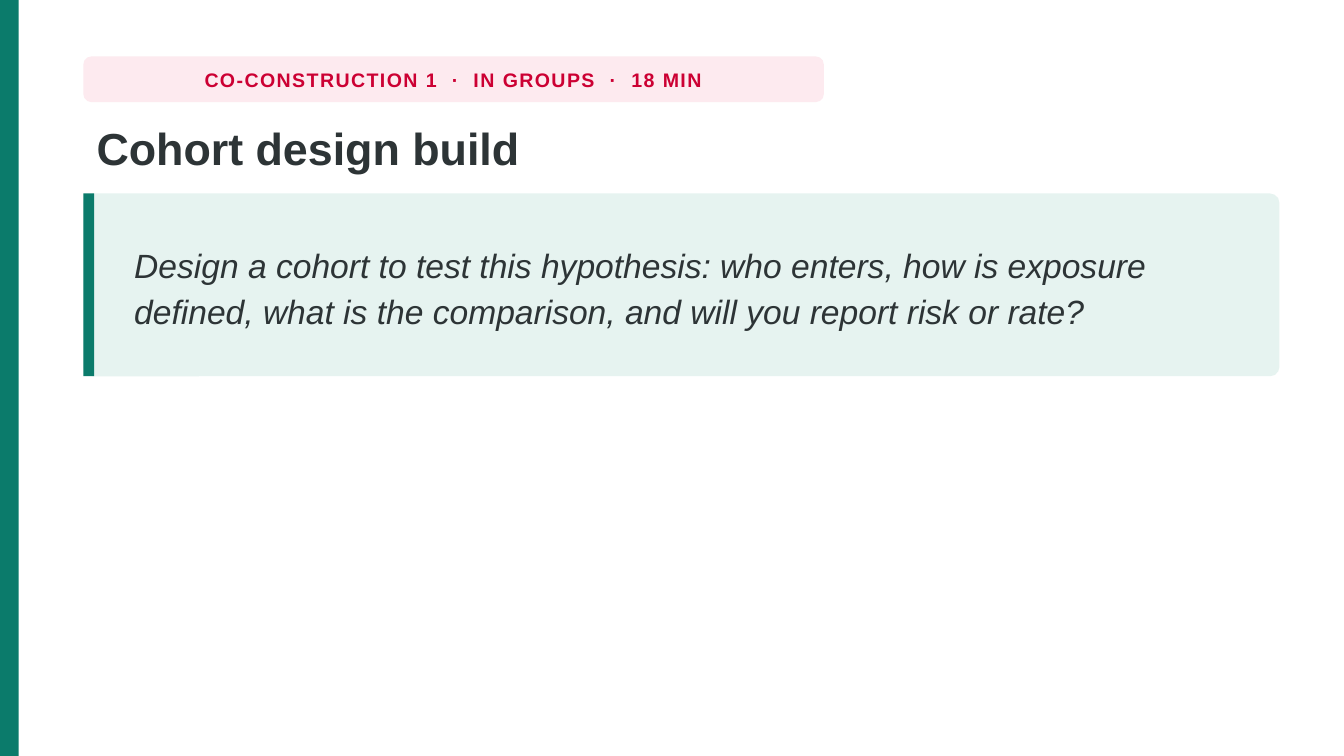
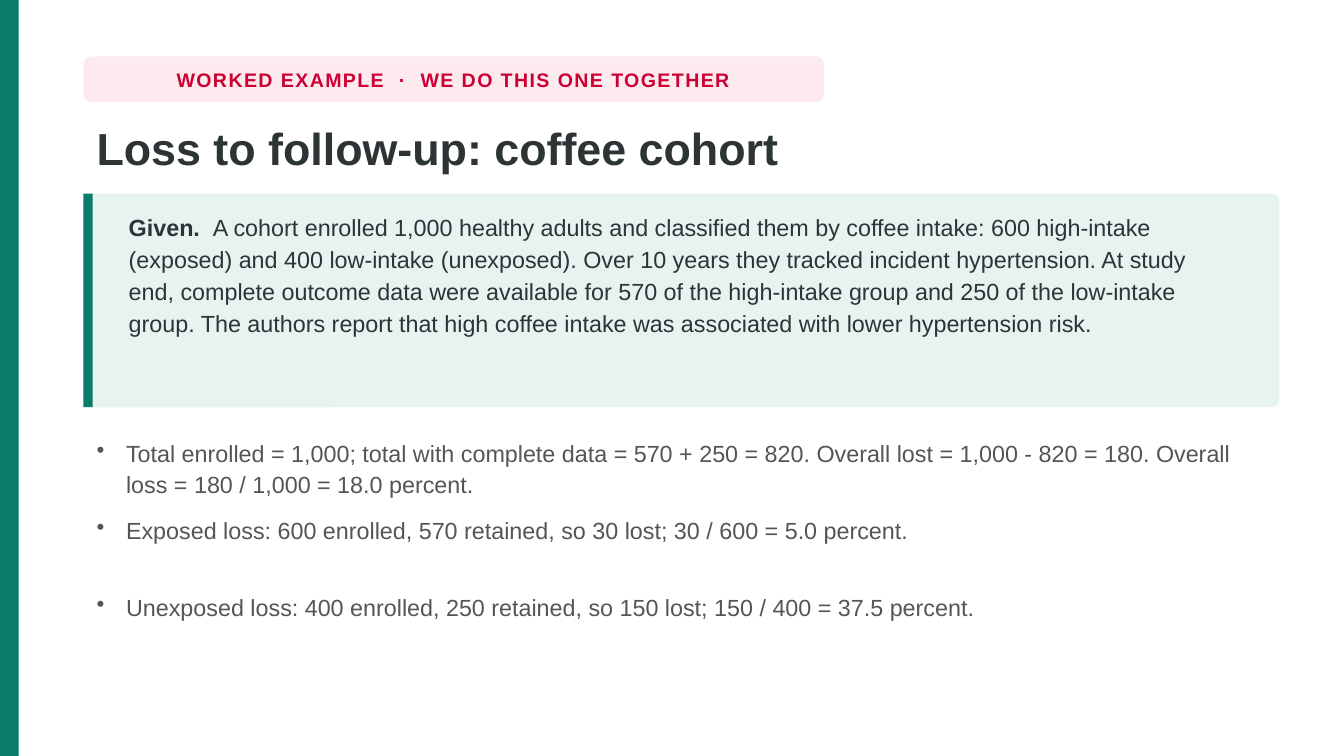
from pptx import Presentation
from pptx.dml.color import RGBColor
from pptx.enum.shapes import MSO_SHAPE as SHAPE
from pptx.enum.text import MSO_ANCHOR as ANCHOR, PP_ALIGN as ALIGN
from pptx.oxml.ns import qn
from pptx.util import Pt
from lxml import etree

GREEN = RGBColor(0x0B, 0x7B, 0x6B)
MINT = RGBColor(0xE6, 0xF3, 0xF0)
PINK = RGBColor(0xFD, 0xEA, 0xEF)
RED = RGBColor(0xCC, 0x00, 0x33)
INK = RGBColor(0x2D, 0x34, 0x36)
GREY = RGBColor(0x55, 0x55, 0x55)

FONT = "Arial"
WIDTH, HEIGHT = 720, 405
LEFT, CONTENT_W = 44.64, 640.8
CARD_TOP = 103.68
BULLET_INDENT, BULLET_H, BULLET_STEP = 15.84, 35.28, 41.4


class Deck:
    """Holds the shared style and the slide being built."""

    def __init__(self):
        self.prs = Presentation()
        self.prs.slide_width, self.prs.slide_height = Pt(WIDTH), Pt(HEIGHT)
        self.slide = None

    def add_slide(self, tag, title):
        """Start a slide with its side band, tag pill and title."""
        self.slide = self.prs.slides.add_slide(self.prs.slide_layouts[6])
        self.box(0, 0, 10.08, HEIGHT, GREEN)
        pill = (LEFT, 30.24, 396.72, 24.48)
        self.box(*pill, PINK, radius=4.32)
        p = self.text(*pill, [tag], 10.5, RED, anchor=ANCHOR.MIDDLE, wrap=False)
        p.alignment = ALIGN.CENTER
        p.runs[0].font.bold = True
        p.runs[0].font._element.set("spc", "80")
        p = self.text(LEFT, 60.48, CONTENT_W, 40.32, [title], 24, INK, spacing=1.02)
        p.runs[0].font.bold = True

    def box(self, x, y, w, h, color, radius=0):
        kind = SHAPE.ROUNDED_RECTANGLE if radius else SHAPE.RECTANGLE
        sp = self.slide.shapes.add_shape(kind, Pt(x), Pt(y), Pt(w), Pt(h))
        if radius:
            sp.adjustments[0] = radius / min(w, h)
        sp.shadow.inherit = False
        sp.fill.solid()
        sp.fill.fore_color.rgb = color
        sp.line.fill.background()

    def text(self, x, y, w, h, parts, size, color, spacing=None,
             anchor=ANCHOR.TOP, wrap=True):
        """Add a one-paragraph text box, one run per part; return the paragraph."""
        tf = self.slide.shapes.add_textbox(Pt(x), Pt(y), Pt(w), Pt(h)).text_frame
        tf.word_wrap = wrap
        tf.vertical_anchor = anchor
        p = tf.paragraphs[0]
        p.line_spacing = spacing
        for part in parts:
            r = p.add_run()
            r.text = part
            r.font.name, r.font.size = FONT, Pt(size)
            r.font.color.rgb = color
        return p

    def card(self, h, bar_w, radius):
        """Add a mint panel with a green bar on its left edge."""
        self.box(LEFT, CARD_TOP, CONTENT_W, h, MINT, radius)
        self.box(LEFT, CARD_TOP, bar_w, h, GREEN)

    def prompt(self, question):
        self.card(97.92, 5.76, 5)
        p = self.text(64.8, 107.28, 601.2, 90.72, [question], 18, INK, 1.16,
                      ANCHOR.MIDDLE)
        p.runs[0].font.italic = True

    def given(self, facts):
        self.card(114.48, 5.04, 4.32)
        p = self.text(61.92, 108.72, 604.8, 104.4, ["Given.  ", facts], 12.5, INK, 1.14)
        p.runs[0].font.bold = True

    def bullets(self, top, items):
        for i, item in enumerate(items):
            p = self.text(LEFT, top + i * BULLET_STEP, CONTENT_W, BULLET_H,
                          [item], 12.5, GREY, 1.12)
            pPr = p._p.get_or_add_pPr()
            pPr.set("marL", str(Pt(BULLET_INDENT)))
            pPr.set("indent", str(-Pt(BULLET_INDENT)))
            etree.SubElement(pPr, qn("a:buChar")).set("char", "•")


def main():
    deck = Deck()

    deck.add_slide("CO-CONSTRUCTION 1  ·  IN GROUPS  ·  18 MIN", "Cohort design build")
    deck.prompt("Design a cohort to test this hypothesis: who enters, how is exposure "
                "defined, what is the comparison, and will you report risk or rate?")

    deck.add_slide("WORKED EXAMPLE  ·  WE DO THIS ONE TOGETHER",
                   "Loss to follow-up: coffee cohort")
    deck.given("A cohort enrolled 1,000 healthy adults and classified them by coffee "
               "intake: 600 high-intake (exposed) and 400 low-intake (unexposed). Over "
               "10 years they tracked incident hypertension. At study end, complete "
               "outcome data were available for 570 of the high-intake group and 250 of "
               "the low-intake group. The authors report that high coffee intake was "
               "associated with lower hypertension risk.")
    deck.bullets(229.68, [
        "Total enrolled = 1,000; total with complete data = 570 + 250 = 820. "
        "Overall lost = 1,000 - 820 = 180. Overall loss = 180 / 1,000 = 18.0 percent.",
        "Exposed loss: 600 enrolled, 570 retained, so 30 lost; 30 / 600 = 5.0 percent.",
        "Unexposed loss: 400 enrolled, 250 retained, so 150 lost; "
        "150 / 400 = 37.5 percent.",
    ])

    deck.prs.save("out.pptx")


if __name__ == "__main__":
    main()
